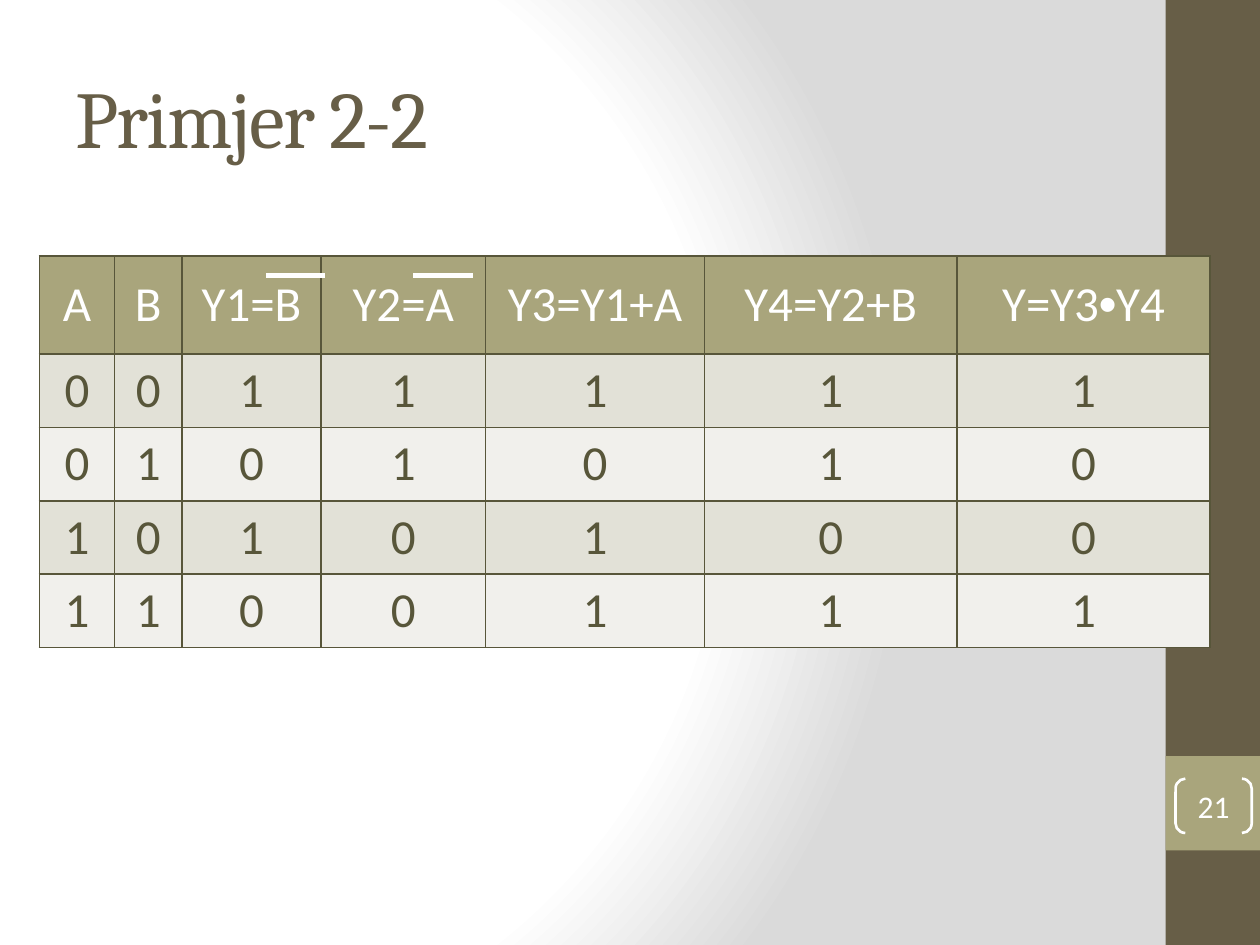
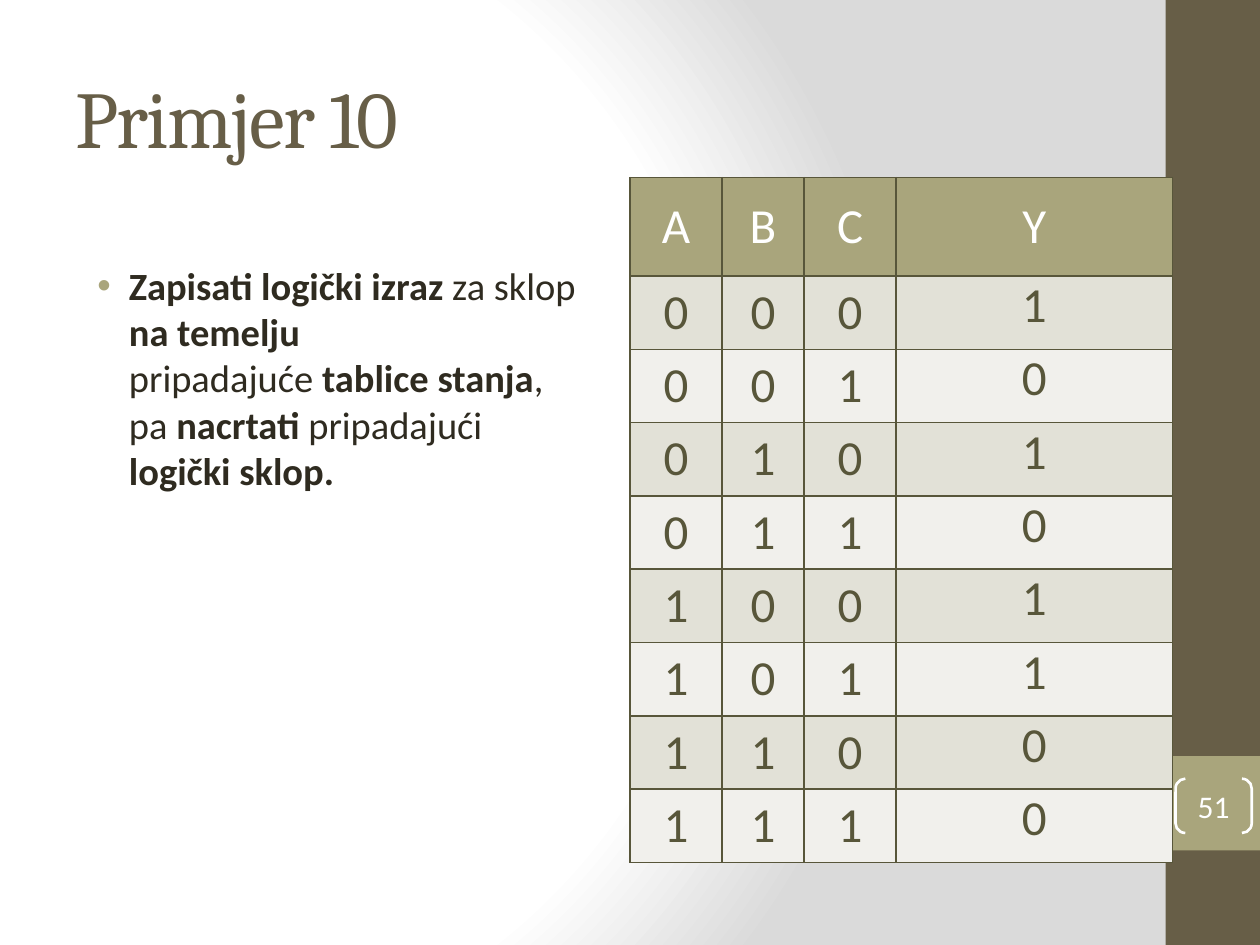
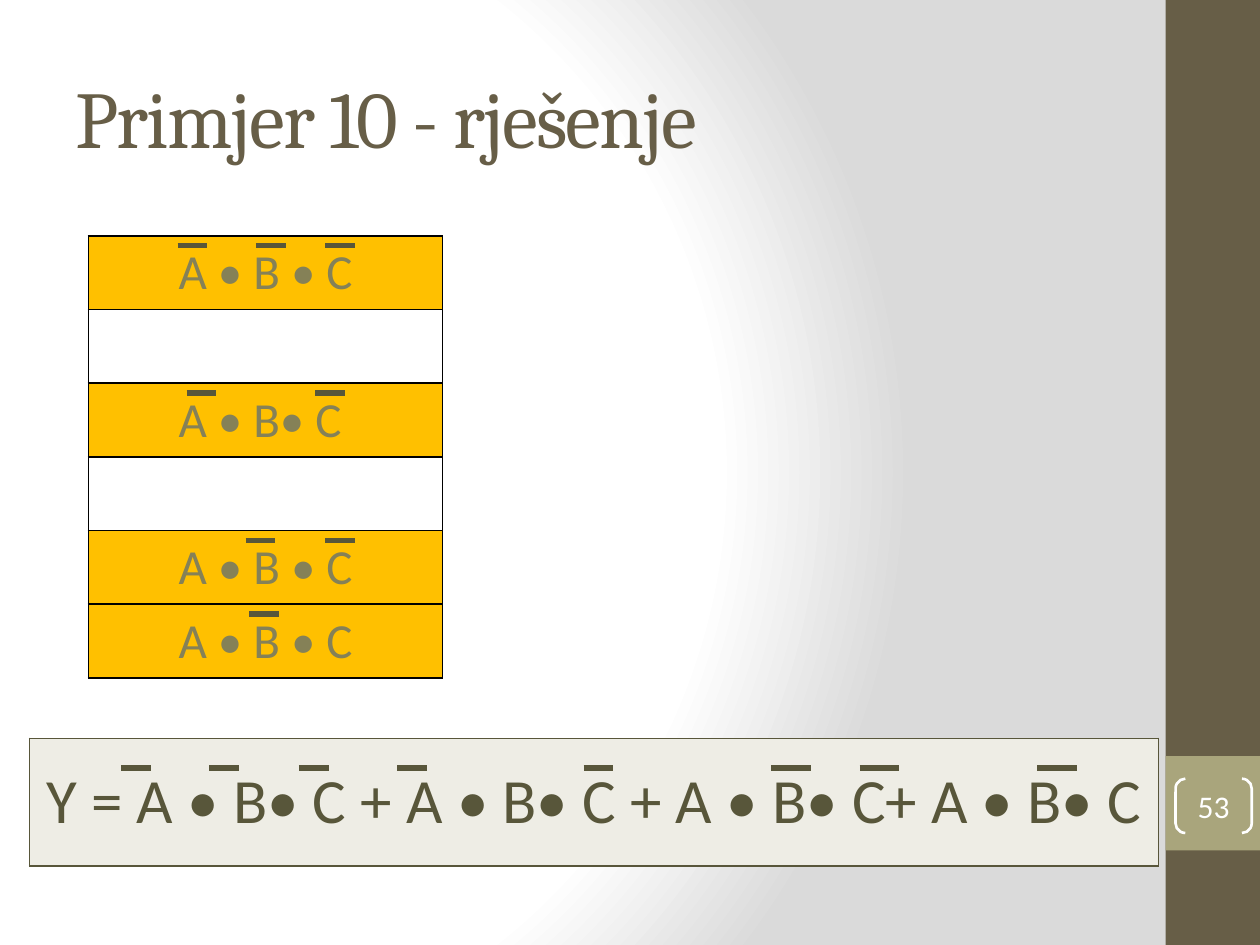
from dataclasses import dataclass
from itertools import accumulate

from lxml.etree import SubElement
from pptx import Presentation
from pptx.dml.color import RGBColor
from pptx.enum.shapes import MSO_CONNECTOR, MSO_SHAPE
from pptx.enum.text import MSO_ANCHOR, PP_ALIGN
from pptx.oxml import parse_xml
from pptx.oxml.ns import nsdecls, qn
from pptx.util import Pt


@dataclass(frozen=True)
class Theme:
    white: str = "FFFFFF"
    backdrop_edge: str = "DADADA"
    brown: str = "675E47"
    olive: str = "A9A57C"
    dark_olive: str = "58563A"
    term_ink: str = "858157"
    body_ink: str = "2F2B20"
    band_odd: str = "E2E1D7"
    band_even: str = "F1F0EC"
    pale: str = "EEEDE5"
    amber: str = "FFC000"
    black: str = "000000"
    heading_font: str = "Cambria"
    body_font: str = "Calibri"
    symbol_font: str = "Arial"
    title_size: float = 46
    formula_size: float = 36
    cell_size: float = 28
    body_size: float = 22
    number_size: float = 18


THEME = Theme()


@dataclass(frozen=True)
class Box:
    left: float
    top: float
    width: float
    height: float

    def lengths(self) -> tuple:
        return Pt(self.left), Pt(self.top), Pt(self.width), Pt(self.height)


@dataclass(frozen=True)
class Piece:
    """A stretch of text; an empty font means the paragraph's font."""
    text: str
    bold: bool = False
    font: str = ""
    breaks: bool = False


@dataclass(frozen=True)
class CellStyle:
    fill: str
    ink: str = THEME.dark_olive
    size: float = THEME.cell_size
    border: str = THEME.dark_olive
    anchor: MSO_ANCHOR = MSO_ANCHOR.MIDDLE
    side_margin: float = 5
    end_margin: float = 0


@dataclass(frozen=True)
class Term:
    """A product of inputs, with the left ends of the bars over negated ones."""
    text: str
    bars: tuple = ()


SLIDE_WIDTH, SLIDE_HEIGHT = 720, 540
SIDE_BAND = Box(666, 0, 54, SLIDE_HEIGHT)
NUMBER_BAND = Box(666, 432, 54, 54)
NUMBER_BRACKETS = Box(671.75, 445, 43.5, 31)
TITLE_BOX = Box(36, 21.6, 600, 90)
HEADER_HEIGHT, ROW_HEIGHT = 56.2, 41.9

HEADER = CellStyle(THEME.olive, THEME.white)
BANDS = (CellStyle(THEME.band_odd), CellStyle(THEME.band_even))
TERM_STYLE = CellStyle(THEME.amber, THEME.term_ink, border=THEME.black,
                       anchor=MSO_ANCHOR.BOTTOM, side_margin=7.2, end_margin=3.6)
GAP_STYLE = CellStyle(THEME.white, border=THEME.black)
FORMULA_STYLE = CellStyle(THEME.pale, size=THEME.formula_size)

STEPS_HEADER = ("A", "B", "Y1=B", "Y2=A", "Y3=Y1+A", "Y4=Y2+B",
                (Piece("Y=Y3"), Piece("•", True, THEME.symbol_font), Piece("Y4")))
STEPS_ROWS = ("0011111", "0101010", "1010100", "1100111")
STATE_ROWS = ("0001", "0010", "0101", "0110", "1001", "1011", "1100", "1110")
TASK = (
    Piece("Zapisati logički izraz ", True),
    Piece("za sklop "),
    Piece("na temelju ", True, breaks=True),
    Piece("pripadajuće "),
    Piece("tablice stanja", True),
    Piece(", pa "),
    Piece("nacrtati", True),
    Piece(" pripadajući ", breaks=True),
    Piece("logički sklop.", True),
)
TERMS = (
    Term("A • B • C", (101.5, 146.2, 185.8)),
    Term(""),
    Term("A • B• C ", (106.6, 180)),
    Term(""),
    Term("A • B • C", (140.4, 185.8)),
    Term("A • B • C", (142.5,)),
)
FORMULA = "Y = A • B• C + A • B• C + A • B• C+ A • B• C"
FORMULA_BARS = (69.3, 119.7, 170.8, 226.9, 333.5)
FORMULA_WIDE_BARS = (440.8, 491.2, 592.7)


def rgb(colour: str) -> RGBColor:
    return RGBColor.from_string(colour)


def write(paragraph, content, size: float, ink: str, font: str = THEME.body_font) -> None:
    """Fill a paragraph with a string or with a sequence of pieces."""
    paragraph.font.size = Pt(size)
    paragraph.font.name = font
    paragraph.font.color.rgb = rgb(ink)
    for piece in (Piece(content),) if isinstance(content, str) else content:
        run = paragraph.add_run()
        run.text = piece.text
        if piece.bold:
            run.font.bold = True
        if piece.font:
            run.font.name = piece.font
        if piece.breaks:
            paragraph.add_line_break()


def set_backdrop(master) -> None:
    """Give every slide the white-to-grey circular gradient."""
    master.background.fill.solid()
    properties = master.element.find(".//" + qn("p:bgPr"))
    stops = ((0, THEME.white), (75, THEME.white), (100, THEME.backdrop_edge))
    stop_xml = "".join(f'<a:gs pos="{share * 1000}"><a:srgbClr val="{colour}"/></a:gs>'
                       for share, colour in stops)
    properties.replace(properties.find(qn("a:solidFill")), parse_xml(
        f'<a:gradFill {nsdecls("a")} rotWithShape="1"><a:gsLst>{stop_xml}</a:gsLst>'
        '<a:path path="circle"><a:fillToRect l="20000" t="50000" r="100000" b="50000"/>'
        '</a:path></a:gradFill>'))


def add_band(slide, box: Box, colour: str) -> None:
    band = slide.shapes.add_shape(MSO_SHAPE.RECTANGLE, *box.lengths())
    band.shadow.inherit = False
    band.fill.solid()
    band.fill.fore_color.rgb = rgb(colour)
    band.line.fill.background()


def add_text_box(slide, box: Box):
    frame = slide.shapes.add_textbox(*box.lengths()).text_frame
    frame.word_wrap = True
    return frame


def add_number(slide, number: int) -> None:
    brackets = slide.shapes.add_shape(MSO_SHAPE.DOUBLE_BRACKET, *NUMBER_BRACKETS.lengths())
    brackets.shadow.inherit = False
    brackets.adjustments[0] = 0.18
    brackets.fill.background()
    brackets.line.color.rgb = rgb(THEME.white)
    brackets.line.width = Pt(1.5)
    frame = brackets.text_frame
    frame.margin_left = frame.margin_right = frame.margin_top = frame.margin_bottom = 0
    frame.vertical_anchor = MSO_ANCHOR.MIDDLE
    frame.paragraphs[0].alignment = PP_ALIGN.CENTER
    write(frame.paragraphs[0], str(number), THEME.number_size, THEME.white)


def add_framed_slide(prs, title: str, number: int):
    """Add a slide with the side bands, title and slide number."""
    slide = prs.slides.add_slide(prs.slide_layouts[6])
    add_band(slide, SIDE_BAND, THEME.brown)
    add_band(slide, NUMBER_BAND, THEME.olive)
    frame = add_text_box(slide, TITLE_BOX)
    frame.vertical_anchor = MSO_ANCHOR.MIDDLE
    heading = frame.paragraphs[0]
    write(heading, title, THEME.title_size, THEME.brown, THEME.heading_font)
    heading.runs[0].font._element.set("spc", "-100")
    add_number(slide, number)
    return slide


def style_cell(cell, content, style: CellStyle) -> None:
    cell.fill.solid()
    cell.fill.fore_color.rgb = rgb(style.fill)
    cell.vertical_anchor = style.anchor
    cell.margin_left = cell.margin_right = Pt(style.side_margin)
    cell.margin_top = cell.margin_bottom = Pt(style.end_margin)
    properties = cell._tc.get_or_add_tcPr()
    for place, side in enumerate(("lnL", "lnR", "lnT", "lnB")):
        properties.insert(place, parse_xml(
            f'<a:{side} {nsdecls("a")} w="{Pt(1)}"><a:solidFill>'
            f'<a:srgbClr val="{style.border}"/></a:solidFill></a:{side}>'))
    paragraph = cell.text_frame.paragraphs[0]
    paragraph.alignment = PP_ALIGN.CENTER
    write(paragraph, content, style.size, style.ink)


def add_grid(slide, left: float, top: float, widths, heights, rows, styles):
    """Add a table whose rows each follow the style in the same place."""
    box = Box(left, top, sum(widths), sum(heights))
    grid = slide.shapes.add_table(len(heights), len(widths), *box.lengths()).table
    grid.first_row = grid.horz_banding = False
    for column, width in zip(grid.columns, widths):
        column.width = Pt(width)
    for row, height, contents, style in zip(grid.rows, heights, rows, styles):
        row.height = Pt(height)
        for cell, content in zip(row.cells, contents):
            style_cell(cell, content, style)
    return grid


def add_truth_table(slide, left: float, top: float, widths, header, states):
    heights = [HEADER_HEIGHT] + [ROW_HEIGHT] * len(states)
    styles = [HEADER] + [BANDS[i % 2] for i in range(len(states))]
    return add_grid(slide, left, top, widths, heights, [header, *states], styles)


def add_negation_bars(slide, lefts, y: float, width: float,
                      colour: str = THEME.dark_olive) -> None:
    for left in lefts:
        bar = slide.shapes.add_connector(
            MSO_CONNECTOR.STRAIGHT, Pt(left), Pt(y), Pt(left + width), Pt(y))
        bar.line.color.rgb = rgb(colour)
        bar.line.width = Pt(3)
        SubElement(bar._element.spPr, qn("a:effectLst"))


def add_task(slide) -> None:
    paragraph = add_text_box(slide, Box(39.6, 146.2, 303.8, 247.7)).paragraphs[0]
    paragraph.space_before = Pt(4.4)
    properties = paragraph._p.get_or_add_pPr()
    properties.set("marL", str(Pt(27)))
    properties.set("indent", str(Pt(-18)))
    colour = SubElement(properties, qn("a:buClr"))
    SubElement(colour, qn("a:srgbClr"), val=THEME.olive)
    SubElement(properties, qn("a:buFont"), typeface=THEME.symbol_font)
    SubElement(properties, qn("a:buChar"), char="•")
    write(paragraph, TASK, THEME.body_size, THEME.body_ink)


def build_steps(prs) -> None:
    slide = add_framed_slide(prs, "Primjer 2-2", 21)
    add_truth_table(slide, 22.5, 146.2, (43, 38.5, 79.5, 94, 125, 144.5, 144.5),
                    STEPS_HEADER, STEPS_ROWS)
    add_negation_bars(slide, (151.9, 236.2), 157.5, 33.8, THEME.white)


def build_task(prs) -> None:
    slide = add_framed_slide(prs, "Primjer 10", 51)
    add_task(slide)
    states = add_truth_table(slide, 360, 101.5, (52.5, 47, 52.5, 158), "ABCY", STATE_ROWS)
    for row in range(1, len(states.rows)):
        states.cell(row, 3).vertical_anchor = MSO_ANCHOR.TOP


def build_solution(prs) -> None:
    slide = add_framed_slide(prs, "Primjer 10 - rješenje", 53)
    terms_top, bar_drop = 134.8, 5.6
    heights = [42.1] * len(TERMS)
    add_grid(slide, 50.5, terms_top, (202.5,), heights, [(term.text,) for term in TERMS],
             [TERM_STYLE if term.text else GAP_STYLE for term in TERMS])
    for term, row_top in zip(TERMS, accumulate(heights, initial=terms_top)):
        add_negation_bars(slide, term.bars, row_top + bar_drop, 17)
    # The formula stops short of the side band, so the slide number stays clear.
    add_grid(slide, 16.9, 422, (645,), (73,), [(FORMULA,)], [FORMULA_STYLE])
    add_negation_bars(slide, FORMULA_BARS, 438.9, 17)
    add_negation_bars(slide, FORMULA_WIDE_BARS, 438.9, 22.5)


def main() -> None:
    prs = Presentation()
    prs.slide_width, prs.slide_height = Pt(SLIDE_WIDTH), Pt(SLIDE_HEIGHT)
    set_backdrop(prs.slide_master)
    build_steps(prs)
    build_task(prs)
    build_solution(prs)
    prs.save("out.pptx")


if __name__ == "__main__":
    main()
